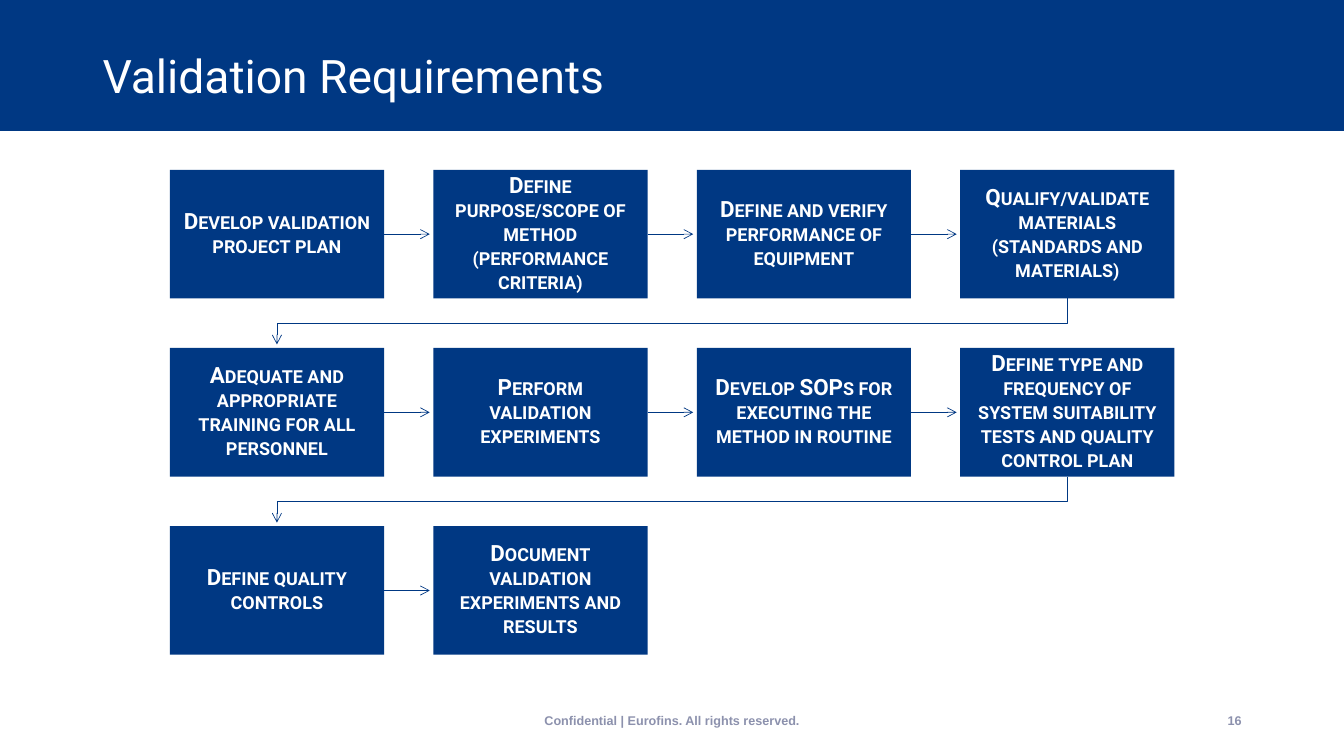
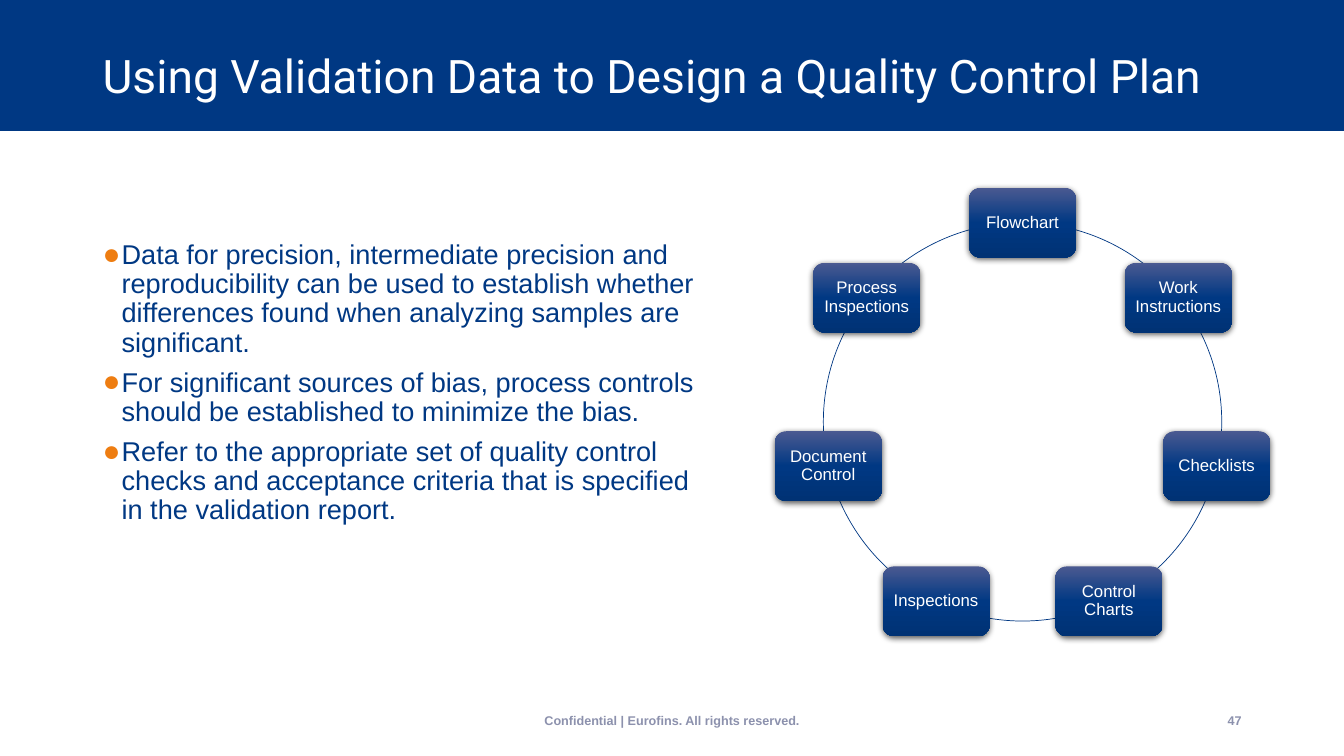
from copy import deepcopy
from dataclasses import dataclass
from math import cos, pi, sin

from pptx import Presentation, util as u
from pptx.dml.color import RGBColor
from pptx.enum import shapes, text
from pptx.oxml import parse_xml
from pptx.oxml.ns import nsdecls, qn

Cm, Pt = u.Cm, u.Pt

NAVY = RGBColor(0x00, 0x38, 0x83)
SLATE = RGBColor(0x4B, 0x5A, 0x91)
DEEP = RGBColor(0x00, 0x32, 0x74)
GREY = RGBColor(0x8C, 0x91, 0xAD)
ORANGE = RGBColor(0xEE, 0x7D, 0x11)
WHITE = RGBColor(0xFF, 0xFF, 0xFF)

WIDE, HIGH = 33.87, 19.05
MIDDLE = text.MSO_ANCHOR.MIDDLE
LEFT, CENTER, RIGHT = text.PP_ALIGN.LEFT, text.PP_ALIGN.CENTER, text.PP_ALIGN.RIGHT
RECT = shapes.MSO_SHAPE.RECTANGLE


@dataclass(frozen=True)
class Box:
    left: float
    top: float
    width: float
    height: float

    @property
    def right(self) -> float:
        return self.left + self.width

    @property
    def base(self) -> float:
        return self.top + self.height

    @property
    def mid(self) -> float:
        return self.left + self.width / 2

    def lengths(self) -> tuple:
        return Cm(self.left), Cm(self.top), Cm(self.width), Cm(self.height)


@dataclass(frozen=True)
class Style:
    font: dict
    para: dict
    inset: float | None = None
    anchor: text.MSO_ANCHOR = MIDDLE


TITLE = Style({"name": "Roboto", "size": Pt(33), "bold": False},
              {"alignment": LEFT, "line_spacing": 0.9})
STEP = Style({"name": "Roboto", "size": Pt(16), "bold": True},
             {"alignment": CENTER, "line_spacing": 0.9}, 0.3)
NODE = Style({"name": "Arial", "size": Pt(12)},
             {"alignment": CENTER, "line_spacing": 0.9}, 0.13)
BODY = Style({"name": "Arial", "size": Pt(19.4)},
             {"alignment": LEFT, "line_spacing": 0.9}, None, text.MSO_ANCHOR.TOP)
SMALL = {"name": "Arial", "size": Pt(9), "bold": True}
FOOT = Style(SMALL, {"alignment": CENTER})
PAGE = Style(SMALL, {"alignment": RIGHT})

TITLE_BOX = Box(2.33, 1.02, 29.21, 1.9)
BODY_BOX = Box(2.33, 5.94, 15.55, 7.85)
FOOT_BOX = Box(11.22, 17.64, 11.43, 1.02)
PAGE_BOX = Box(23.92, 17.64, 7.62, 1.02)

STEPS = [
    "Develop validation project plan",
    "Define purpose/scope of method (performance criteria)",
    "Define and verify performance of equipment",
    "Qualify/validate materials (standards and materials)",
    "Adequate and appropriate training for all personnel",
    "Perform validation experiments",
    "Develop SOPs for executing the method in routine",
    "Define type and frequency of system suitability tests and quality control plan",
    "Define quality controls",
    "Document validation experiments and results",
]
COLS = 4
POINTS = [
    "Data for precision, intermediate precision and reproducibility can be used to "
    "establish whether differences found when analyzing samples are significant.",
    "For significant sources of bias, process controls should be established to "
    "minimize the bias.",
    "Refer to the appropriate set of quality control checks and acceptance criteria "
    "that is specified in the validation report.",
]
NODES = ["Flowchart", "Work Instructions", "Checklists", "Control Charts",
         "Inspections", "Document Control", "Process Inspections"]


def apply(item, values: dict) -> None:
    for name, value in values.items():
        setattr(item, name, value)


def place(shape, box: Box) -> None:
    apply(shape, dict(zip(("left", "top", "width", "height"), box.lengths())))


def write(shape, lines: list[str], style: Style, color: RGBColor) -> None:
    frame = shape.text_frame
    apply(frame, {"word_wrap": True, "auto_size": text.MSO_AUTO_SIZE.NONE,
                  "vertical_anchor": style.anchor})
    if style.inset is not None:
        sides = ("margin_left", "margin_top", "margin_right", "margin_bottom")
        apply(frame, dict.fromkeys(sides, Cm(style.inset)))
    frame.text = "\n".join(lines)
    for para in frame.paragraphs:
        apply(para, style.para)
        for run in para.runs:
            apply(run.font, style.font)
            run.font.color.rgb = color


def draw(slide, kind: shapes.MSO_SHAPE, box: Box):
    shape = slide.shapes.add_shape(kind, *box.lengths())
    shape.shadow.inherit = False
    shape.fill.solid()
    shape.fill.fore_color.rgb = NAVY
    shape.line.fill.background()
    return shape


def ink(shape) -> None:
    shape.line.color.rgb = NAVY
    shape.line.width = Pt(0.5)


def point(shape) -> None:
    ink(shape)
    line = next(shape.element.iter(qn("a:ln")))
    line.append(parse_xml(f'<a:tailEnd {nsdecls("a")} type="arrow"/>'))


def link(slide, start: Box, end: Box) -> None:
    level = Cm(start.top + start.height / 2)
    line = slide.shapes.add_connector(shapes.MSO_CONNECTOR.STRAIGHT, Cm(start.right),
                                      level, Cm(end.left - 0.09), level)
    point(line)
    props = next(line.element.iter(qn("p:spPr")))
    props.append(parse_xml(f'<a:effectLst {nsdecls("a")}/>'))


def turn(slide, start: Box, end: Box) -> None:
    level = (start.base + end.top) / 2
    spots = [(start.mid, level), (end.mid, level), (end.mid, end.top - 0.09)]
    route = slide.shapes.build_freeform(Cm(start.mid), Cm(start.base))
    route.add_line_segments([(Cm(x), Cm(y)) for x, y in spots], close=False)
    line = route.convert_to_shape()
    line.shadow.inherit = False
    line.fill.background()
    point(line)


def step(slide, box: Box, label: str) -> None:
    shape = draw(slide, RECT, box)
    write(shape, [label], STEP, WHITE)
    for props in shape.element.iter(qn("a:rPr")):
        props.set("cap", "small")


def node(slide, box: Box, label: str) -> None:
    shape = draw(slide, shapes.MSO_SHAPE.ROUNDED_RECTANGLE, box)
    shape.fill.gradient()
    shape.fill.gradient_angle = 270
    stops = next(shape.element.iter(qn("a:gsLst")))
    stops.append(deepcopy(stops[0]))
    for stop, color, spot in zip(shape.fill.gradient_stops, (SLATE, NAVY, DEEP), (0, 0.5, 1)):
        stop.color.rgb = color
        stop.position = spot
    next(shape.element.iter(qn("a:effectLst"))).append(parse_xml(
        f'<a:outerShdw {nsdecls("a")} blurRad="{Pt(4.5)}" dist="{Pt(1.5)}" dir="5400000" '
        'algn="ctr" rotWithShape="0"><a:srgbClr val="000000"><a:alpha val="63000"/>'
        '</a:srgbClr></a:outerShdw>'))
    write(shape, [label], NODE, WHITE)


def list_points(slide) -> None:
    body = slide.placeholders[1]
    place(body, BODY_BOX)
    write(body, POINTS, BODY, NAVY)
    for index, para in enumerate(body.text_frame.paragraphs):
        props = para._p.get_or_add_pPr()
        for name, value in {"marL": Cm(0.48), "indent": Cm(-0.48)}.items():
            props.set(name, str(value))
        for mark in (f'<a:buClr {nsdecls("a")}><a:srgbClr val="{ORANGE}"/></a:buClr>',
                     f'<a:buSzPct {nsdecls("a")} val="110000"/>',
                     f'<a:buFont {nsdecls("a")} typeface="Arial"/>',
                     f'<a:buChar {nsdecls("a")} char="●"/>'):
            props.append(parse_xml(mark))
        para.space_before = Pt(7.5 if index else 0)


def add_slide(deck, layout: int, title: str, page: int):
    slide = deck.slides.add_slide(deck.slide_layouts[layout])
    place(slide.shapes.title, TITLE_BOX)
    write(slide.shapes.title, [title], TITLE, WHITE)
    for box, label, style in (
            (FOOT_BOX, "Confidential | Eurofins. All rights reserved.", FOOT),
            (PAGE_BOX, str(page), PAGE)):
        write(slide.shapes.add_textbox(*box.lengths()), [label], style, GREY)
    return slide


def add_flow(deck):
    slide = add_slide(deck, 5, "Validation Requirements", 16)
    grid = [Box(4.28 + 6.64 * (i % COLS), 4.28 + 4.49 * (i // COLS), 5.4, 3.24)
            for i in range(len(STEPS))]
    for box, label in zip(grid, STEPS):
        step(slide, box, label)
    for start, end in zip(grid, grid[1:]):
        join = link if start.top == end.top else turn
        join(slide, start, end)
    return slide


def add_cycle(deck) -> None:
    slide = add_slide(deck, 1, "Using Validation Data to Design a Quality Control Plan", 47)
    list_points(slide)
    x, y, reach = 25.77, 10.63, 5.02
    wide, high = 2.7, 1.76
    ring = draw(slide, shapes.MSO_SHAPE.OVAL, Box(x - reach, y - reach, 2 * reach, 2 * reach))
    ring.fill.background()
    ink(ring)
    for index, label in enumerate(NODES):
        angle = 2 * pi * index / len(NODES)
        left = x + reach * sin(angle) - wide / 2
        top = y - reach * cos(angle) - high / 2
        node(slide, Box(left, top, wide, high), label)


def main() -> None:
    deck = Presentation()
    apply(deck, {"slide_width": Cm(WIDE), "slide_height": Cm(HIGH)})
    first = add_flow(deck)
    band = draw(first, RECT, Box(0, 0, WIDE, 3.3))
    deck.slide_master.shapes.element.insert(2, band.element)
    add_cycle(deck)
    deck.save("out.pptx")


if __name__ == "__main__":
    main()
